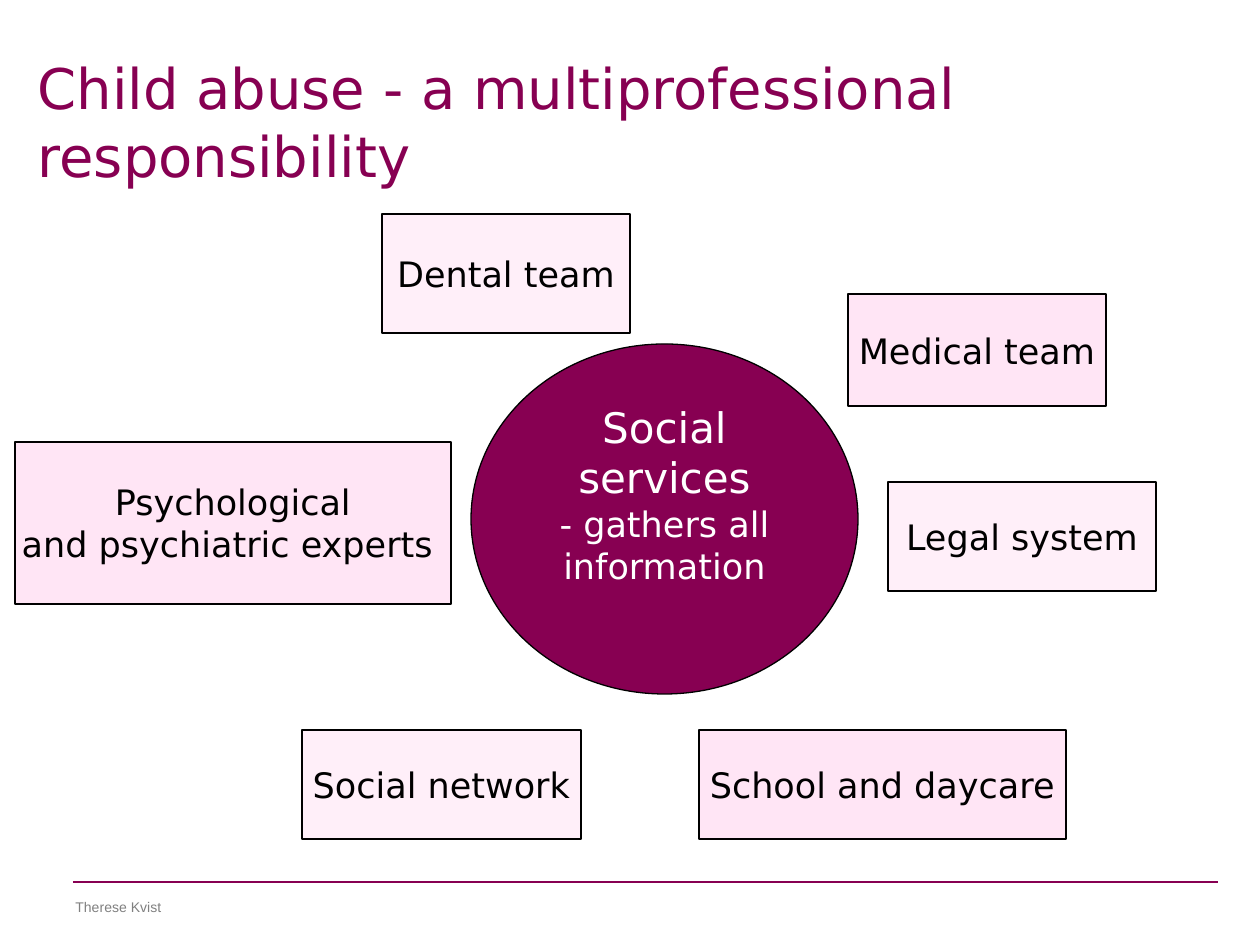
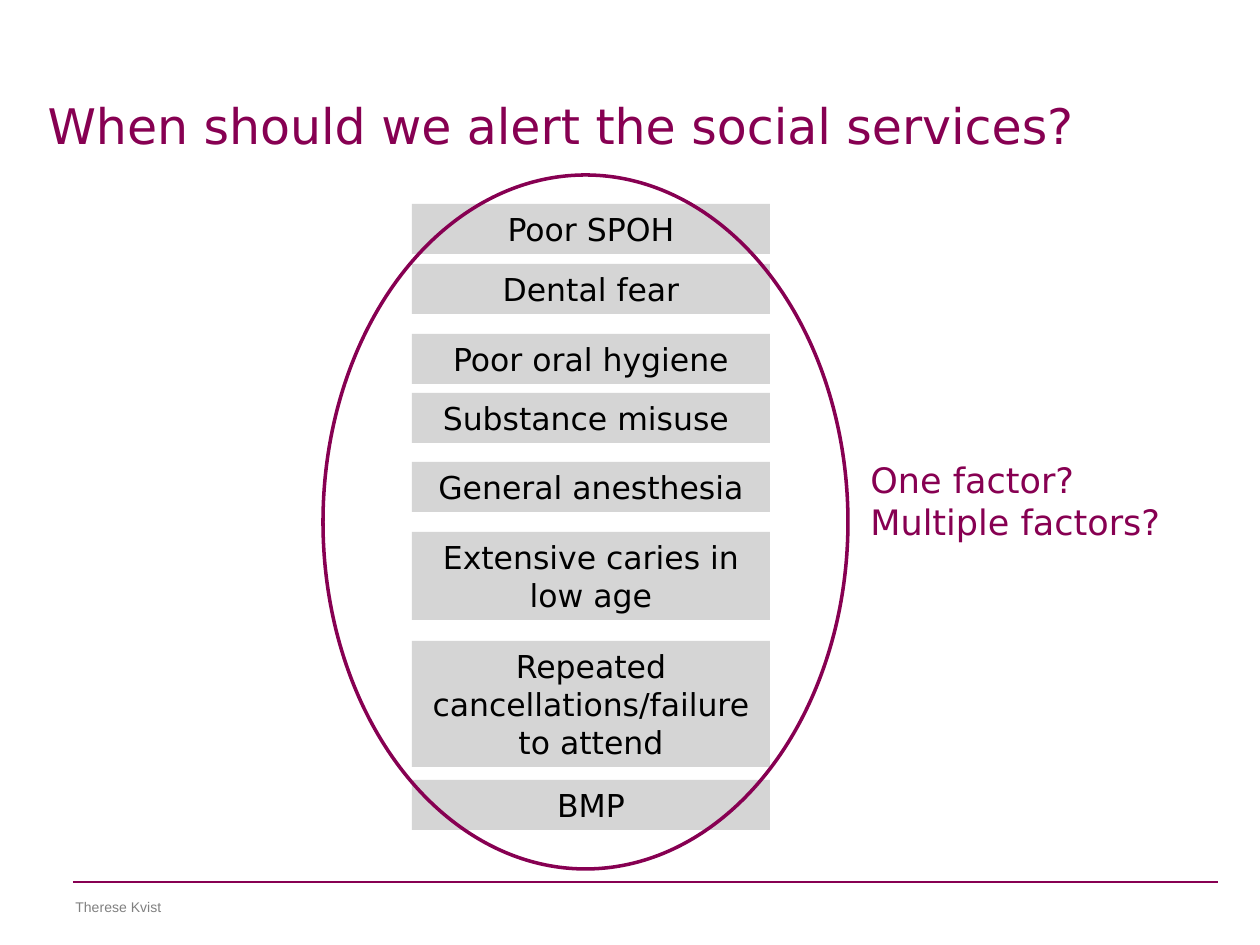
from pptx import Presentation
from pptx import util as u
from pptx.dml.color import RGBColor
from pptx.enum import shapes, text
from pptx.oxml.ns import qn
from lxml import etree

SCALE = 914400 / 126  # EMU in one px
PLUM, ROSE, PALE_ROSE = "870052", "FFE5F5", "FFEFF9"
GREY, FOOTER_GREY, BLACK, WHITE = "D5D5D5", "808080", "000000", "FFFFFF"
BODY_FONT, FOOTER_FONT = "DejaVu Sans", "Arial"

RECT = shapes.MSO_SHAPE.RECTANGLE
OVAL = shapes.MSO_SHAPE.OVAL
TOP, MIDDLE = text.MSO_ANCHOR.TOP, text.MSO_ANCHOR.MIDDLE
LEFT, CENTER = text.PP_ALIGN.LEFT, text.PP_ALIGN.CENTER
FIXED = text.MSO_AUTO_SIZE.NONE
GROW = text.MSO_AUTO_SIZE.SHAPE_TO_FIT_TEXT


def px(length):
    return u.Emu(round(length * SCALE))


def color(hex_value):
    return RGBColor.from_string(hex_value)


def set_values(target, values):
    for name, value in values.items():
        setattr(target, name, value)


def write(shape, lines, ink, align=CENTER, font=BODY_FONT, **frame_values):
    """Fill a shape with (text, size) lines, one paragraph each."""
    frame = shape.text_frame
    set_values(frame, {"word_wrap": True, "auto_size": FIXED,
                       "vertical_anchor": TOP, **frame_values})
    for index, (words, size) in enumerate(lines):
        para = frame.add_paragraph() if index else frame.paragraphs[0]
        para.alignment = align
        span = para.add_run()
        span.text = words
        set_values(span.font, {"name": font, "size": u.Pt(size)})
        span.font.color.rgb = color(ink)


def add_box(page, kind, place, fill=None, line=None, weight=0.75):
    box = page.shapes.add_shape(kind, *map(px, place))
    box.shadow.inherit = False
    if fill:
        box.fill.solid()
        box.fill.fore_color.rgb = color(fill)
    else:
        box.fill.background()
    if line:
        box.line.color.rgb = color(line)
        box.line.width = u.Pt(weight)
    else:
        box.line.fill.background()
    return box


def add_text(page, place, lines, ink, **values):
    box = page.shapes.add_textbox(*map(px, place))
    write(box, lines, ink, align=LEFT, **values)


def add_page(deck, title, place, size):
    """Start a slide with its title, footer rule and footer name."""
    page = deck.slides.add_slide(deck.slide_layouts[5])
    heading = page.shapes.title
    set_values(heading, dict(zip(("left", "top", "width", "height"),
                                 map(px, place))))
    write(heading, [(title, size)], PLUM, align=LEFT, margin_top=px(9))

    rule = page.shapes.add_connector(shapes.MSO_CONNECTOR.STRAIGHT,
                                     px(73), px(882), px(1218), px(882))
    rule.line.color.rgb = color(PLUM)
    rule.line.width = u.Pt(0.75)
    properties = rule._element.find(qn("p:spPr"))
    etree.SubElement(properties, qn("a:effectLst"))
    add_text(page, (63, 892, 399, 32), [("Therese Kvist", 8)], FOOTER_GREY,
             font=FOOTER_FONT)
    return page


def add_profession(page, place, fill, *names):
    box = add_box(page, RECT, place, fill, BLACK)
    write(box, [(name, 20) for name in names], BLACK,
          word_wrap=False, vertical_anchor=MIDDLE)


def add_factors(page, left, top, width, factors):
    """Stack grey labels; each gives its line count and the gap below."""
    for name, line_count, gap in factors:
        height = 12 + 38 * line_count
        box = add_box(page, RECT, (left, top, width, height), GREY)
        write(box, [(name, 18)], BLACK, auto_size=GROW)
        top += height + gap


def build_responsibility(deck):
    page = add_page(deck, "Child abuse - a multiprofessional responsibility",
                    (25, 45, 1042, 119), 32)
    # Professions around the hub
    for place, fill, *names in (
            ((302, 730, 279, 109), PALE_ROSE, "Social network"),
            ((382, 214, 248, 119), PALE_ROSE, "Dental team"),
            ((848, 294, 258, 112), ROSE, "Medical team"),
            ((15, 442, 436, 162), ROSE,
             "Psychological", "and psychiatric experts "),
            ((699, 730, 367, 109), ROSE, "School and daycare"),
            ((888, 482, 268, 109), PALE_ROSE, "Legal system")):
        add_profession(page, place, fill, *names)
    # Hub
    hub = add_box(page, OVAL, (471, 344, 387, 350), PLUM, BLACK)
    write(hub, [("Social services", 24), ("- gathers all information", 20)],
          WHITE)


def build_alert(deck):
    page = add_page(deck, "When should we alert the social services?",
                    (35, 86, 1171, 149), 28)
    # Factors and the ring around them
    add_factors(page, 412, 204, 358, (
        ("Poor SPOH", 1, 10),
        ("Dental fear", 1, 20),
        ("Poor oral hygiene", 1, 9),
        ("Substance misuse ", 1, 19),
        ("General anesthesia", 1, 20),
        ("Extensive caries in low age", 2, 21),
        ("Repeated cancellations/failure to attend", 3, 13),
        ("BMP", 1, 0)))
    add_box(page, OVAL, (323, 175, 525, 694), line=PLUM, weight=2)
    # Question beside the ring
    add_text(page, (858, 452, 466, 97),
             [("One factor?", 20), ("Multiple factors?", 20)], PLUM,
             auto_size=GROW)


def main():
    deck = Presentation()
    set_values(deck, {"slide_width": px(1260), "slide_height": px(945)})
    build_responsibility(deck)
    build_alert(deck)
    deck.save("out.pptx")


if __name__ == "__main__":
    main()
